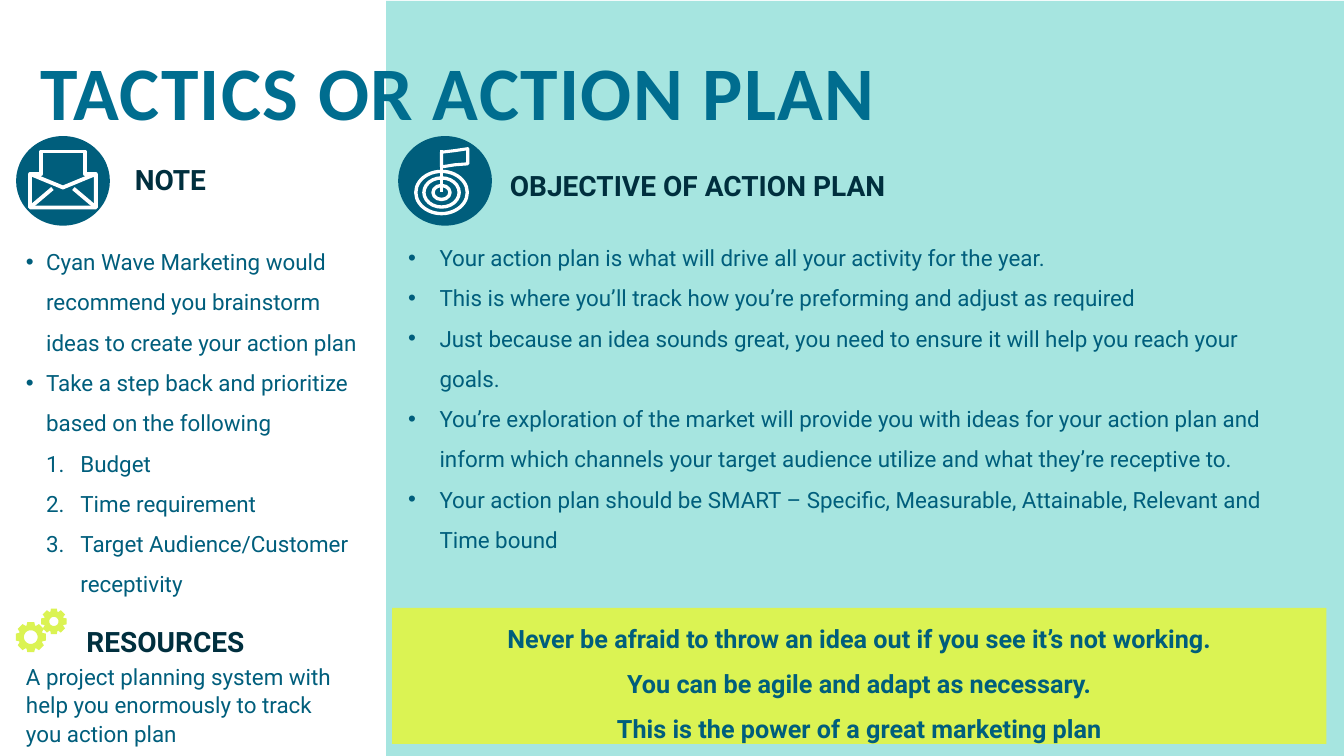
from math import cos, radians, sin

from lxml import etree
from pptx import Presentation
from pptx.dml.color import RGBColor
from pptx.enum.shapes import MSO_CONNECTOR, MSO_SHAPE
from pptx.enum.text import MSO_ANCHOR, PP_ALIGN
from pptx.oxml.ns import qn
from pptx.util import Pt

RECTANGLE, OVAL = MSO_SHAPE.RECTANGLE, MSO_SHAPE.OVAL
STRAIGHT = MSO_CONNECTOR.STRAIGHT
TOP, MIDDLE = MSO_ANCHOR.TOP, MSO_ANCHOR.MIDDLE
CENTER = PP_ALIGN.CENTER

BLUE, TITLE_BLUE, DARK = "005E7C", "006D8F", "002F3E"
AQUA, LIME, WHITE = "4ECDC3", "DBF353", "FFFFFF"
BADGE_WIDTH, BADGE_HEIGHT = 67, 64

NOTES = [
    "Cyan Wave Marketing would recommend you brainstorm ideas to create your action plan",
    "Take a step back and prioritize based on the following",
]
PRIORITIES = ["Budget", "Time requirement", "Target Audience/Customer receptivity"]
OBJECTIVES = [
    "Your action plan is what will drive all your activity for the year.",
    "This is where you’ll track how you’re preforming and adjust as required",
    "Just because an idea sounds great, you need to ensure it will help you reach your goals.",
    "You’re exploration of the market will provide you with ideas for your action plan and "
    "inform which channels your target audience utilize and what they’re receptive to.",
    "Your action plan should be SMART – Specific, Measurable, Attainable, Relevant and Time bound",
]
MESSAGES = [
    "Never be afraid to throw an idea out if you see it’s not working.",
    "You can be agile and adapt as necessary.",
    "This is the power of a great marketing plan",
]


def rgb(hex_color):
    return RGBColor.from_string(hex_color)


def paint(shape, fill=None, line=None, line_width=0):
    shape.shadow.inherit = False
    if fill:
        shape.fill.solid()
        shape.fill.fore_color.rgb = rgb(fill)
    else:
        shape.fill.background()
    if line:
        shape.line.color.rgb = rgb(line)
        shape.line.width = Pt(line_width)
    else:
        shape.line.fill.background()


def add_preset(slide, preset, left, top, width, height, **style):
    shape = slide.shapes.add_shape(preset, Pt(left), Pt(top), Pt(width), Pt(height))
    paint(shape, **style)
    return shape


def add_outline(slide, left, top, contours, close=True, **style):
    """Draw contours, given relative to left and top, as one shape."""
    contours = [[(Pt(left + x), Pt(top + y)) for x, y in contour] for contour in contours]
    builder = slide.shapes.build_freeform(*contours[0][0], scale=1.0)
    for index, contour in enumerate(contours):
        if index:
            builder.move_to(*contour[0])
        builder.add_line_segments(contour[1:], close=close)
    paint(builder.convert_to_shape(), **style)


def add_box(slide, left, top, width, height, anchor=TOP):
    frame = slide.shapes.add_textbox(Pt(left), Pt(top), Pt(width), Pt(height)).text_frame
    frame.word_wrap = True
    frame.vertical_anchor = anchor
    return frame


def add_paragraph(frame, text, size, color, bold=False, spacing=1.5, font="Roboto",
                  indent=0, hanging=0, bullet=None):
    """Bullet is a character, or "1." for automatic numbers."""
    paragraph = frame.paragraphs[0]
    if paragraph.runs:
        paragraph = frame.add_paragraph()
    properties = paragraph._p.get_or_add_pPr()
    if indent:
        properties.set("marL", str(Pt(indent)))
        properties.set("indent", str(Pt(-hanging)))
    if bullet == "1.":
        etree.SubElement(properties, qn("a:buFont"), typeface="+mj-lt")
        etree.SubElement(properties, qn("a:buAutoNum"), type="arabicPeriod")
    elif bullet:
        etree.SubElement(properties, qn("a:buFont"), typeface="Arial")
        etree.SubElement(properties, qn("a:buChar"), char=bullet)
    paragraph.line_spacing = spacing
    paragraph.add_run().text = text
    paragraph.font.name = font
    paragraph.font.size = Pt(size)
    paragraph.font.bold = bold
    paragraph.font.color.rgb = rgb(color)
    return paragraph


def add_envelope_badge(slide, left, top):
    add_preset(slide, OVAL, left, top, BADGE_WIDTH, BADGE_HEIGHT, fill=BLUE)
    body = [(10, 27), (33.5, 36.7), (57, 27), (57, 51), (10, 51)]
    add_outline(slide, left, top, [body], line=WHITE, line_width=2.75)
    letter = [(10, 27), (18, 27), (18, 11), (49, 11), (49, 27), (57, 27)]
    folds = [[(10, 51), (26, 37.5)], [(57, 51), (41, 37.5)]]
    add_outline(slide, left, top, [letter] + folds, close=False, line=WHITE, line_width=2.75)


def add_target_badge(slide, left, top):
    add_preset(slide, OVAL, left, top, BADGE_WIDTH, BADGE_HEIGHT, fill=BLUE)
    center_x, center_y = left + 31, top + 40.3
    for radius_x, radius_y in [(18.4, 15.1), (12.6, 10.4), (6.1, 5)]:
        add_preset(slide, OVAL, center_x - radius_x, center_y - radius_y,
                   2 * radius_x, 2 * radius_y, line=WHITE, line_width=2.4)
    pole = slide.shapes.add_connector(STRAIGHT, Pt(center_x), Pt(top + 10),
                                      Pt(center_x), Pt(center_y))
    pole.line.color.rgb = rgb(WHITE)
    pole.line.width = Pt(2.75)
    etree.SubElement(pole._element.spPr, qn("a:effectLst"))
    flag = [(31, 11.5), (40.3, 10.4), (49.7, 9), (49.7, 19.8), (40.3, 20.5), (31, 22)]
    add_outline(slide, left, top, [flag], line=WHITE, line_width=2.2)


def circle_point(center_x, center_y, radius, degrees):
    angle = radians(degrees)
    return center_x + radius * cos(angle), center_y + radius * sin(angle)


def add_gears(slide, left, top):
    contours = []
    for x, y, tip, root, hole in [(10.5, 20.9, 11, 8.8, 4.9), (27, 9.7, 9.4, 7.3, 3.3)]:
        contours.append([
            circle_point(x, y, radius, 45 * tooth + offset)
            for tooth in range(8)
            for radius, offset in [(root, -20), (tip, -13), (tip, 13), (root, 20)]
        ])
        contours.append([circle_point(x, y, hole, -10 * step) for step in range(36)])
    add_outline(slide, left, top, contours, fill=LIME)


def add_title(slide, left, top, width, height):
    frame = add_box(slide, left, top, width, height, MIDDLE)
    title = add_paragraph(frame, "TACTICS OR ACTION PLAN", 54, TITLE_BLUE, True, 0.8, "Calibri")
    title.runs[0]._r.get_or_add_rPr().set("spc", "100")


def add_sidebar(slide, left, top):
    """Note and resources."""
    add_envelope_badge(slide, left + 11.5, top + 97.2)
    add_paragraph(add_box(slide, left + 89.3, top + 100.8, 163.4, 40.3), "NOTE", 20, DARK, True)
    notes = add_box(slide, left + 11.5, top + 164.2, 256.3, 266.4)
    for note in NOTES:
        add_paragraph(notes, note, 16, BLUE, indent=14.4, hanging=14.4, bullet="•")
    for priority in PRIORITIES:
        add_paragraph(notes, priority, 16, BLUE, indent=38.9, hanging=24.5, bullet="1.")

    resources = add_box(slide, left + 11.5, top + 430.6, 241.9, 105.8)
    heading = add_paragraph(resources, "RESOURCES", 20, DARK, True, indent=43.2)
    heading.space_after = Pt(2)
    add_paragraph(resources, "A project planning system with help you enormously to track "
                  "you action plan", 16, BLUE, spacing=Pt(20.4))
    add_gears(slide, left + 11.5, top + 434.2)


def add_objectives(slide, left, top):
    """Objective heading, its points and the closing banner."""
    add_target_badge(slide, left + 8.6, top + 97.2)
    heading = add_box(slide, left + 81.3, top + 105.1, 516.2, 55.4)
    add_paragraph(heading, "OBJECTIVE OF ACTION PLAN", 20, DARK, True)
    points = add_box(slide, left + 8.6, top + 161.3, 645.1, 127.4)
    for objective in OBJECTIVES:
        add_paragraph(points, objective, 16, BLUE, indent=22.5, hanging=22.5, bullet="•")

    banner = add_preset(slide, RECTANGLE, left + 4.3, top + 434.2, 667.4, 97.2, fill=LIME)
    banner.text_frame.word_wrap = True
    banner.text_frame.vertical_anchor = MIDDLE
    for message in MESSAGES:
        add_paragraph(banner.text_frame, message, 18, BLUE, True).alignment = CENTER


def add_backdrop(slide, left, top, width, height):
    panel = add_preset(slide, RECTANGLE, left, top, width, height, fill=AQUA)
    color = panel._element.spPr.find(qn("a:solidFill"))[0]
    etree.SubElement(color, qn("a:alpha"), val="50000")


def main():
    presentation = Presentation()
    presentation.slide_width, presentation.slide_height = Pt(960), Pt(540)
    slide = presentation.slides.add_slide(presentation.slide_layouts[6])
    panel_left = 275.8
    add_backdrop(slide, panel_left, 0.7, 960 - panel_left, 539.3)
    add_title(slide, 21.6, 11.5, 765.4, 118.1)
    add_sidebar(slide, 0, 0)
    add_objectives(slide, panel_left, 0)
    presentation.save("out.pptx")


if __name__ == "__main__":
    main()
